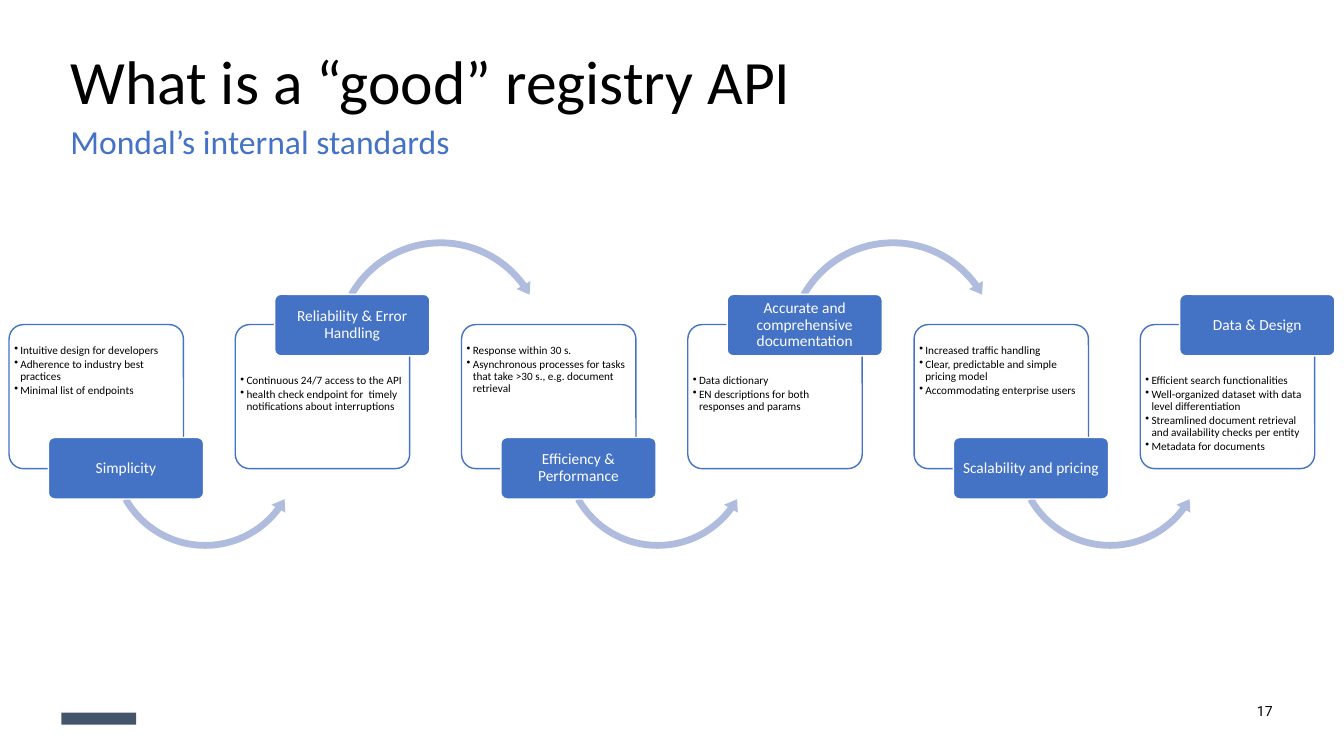
import pptx
import pptx.util
import pptx.dml.color
import pptx.enum.shapes
import pptx.enum.text
import pptx.oxml
import pptx.oxml.ns
import lxml.etree

theme = {
    "blue": "4472C4", "pale": "B0BCDE", "slate": "44546A",
    "white": "FFFFFF", "black": "000000",
    "title": 44, "sub": 24, "label": 11, "page": 10, "list": 8,
    "font": "Calibri", "digit": "Roboto",
}
steps = [
    ("Simplicity", ["Intuitive design for developers",
                    "Adherence to industry best practices",
                    "Minimal list of endpoints"]),
    ("Reliability & Error Handling", [
        "Continuous 24/7 access to the API",
        "health check endpoint for  timely notifications about interruptions"]),
    ("Efficiency & Performance", [
        "Response within 30 s.",
        "Asynchronous processes for tasks that take >30 s., e.g. document retrieval"]),
    ("Accurate and comprehensive documentation", [
        "Data dictionary",
        "EN descriptions for both responses and params"]),
    ("Scalability and pricing", [
        "Increased traffic handling",
        "Clear, predictable and simple pricing model",
        "Accommodating enterprise users"]),
    ("Data & Design", [
        "Efficient search functionalities",
        "Well-organized dataset with data level differentiation",
        "Streamlined document retrieval and availability checks per entity",
        "Metadata for documents"]),
]

cell = pptx.util.Inches(0.1)
kinds = pptx.enum.shapes.MSO_SHAPE
align = pptx.enum.text.PP_ALIGN
anchor = pptx.enum.text.MSO_ANCHOR
qn = pptx.oxml.ns.qn
rgb = pptx.dml.color.RGBColor.from_string

deck = pptx.Presentation()
deck.slide_width = pptx.util.Inches(13.33)
deck.slide_height = pptx.util.Inches(7.5)
slide = deck.slides.add_slide(deck.slide_layouts[6])


def draw(kind, spot, fill, line=None, bends=()):
    shape = slide.shapes.add_shape(kind, *[round(n * cell) for n in spot])
    shape.shadow.inherit = False
    shape.fill.solid()
    shape.fill.fore_color.rgb = rgb(theme[fill])
    if line:
        shape.line.color.rgb = rgb(theme[line])
        shape.line.width = pptx.util.Pt(1)
    else:
        shape.line.fill.background()
    for i, bend in enumerate(bends):
        shape.adjustments[i] = bend
    return shape


def write(shape, lines, size, color, side, mid, space, pad=None, dot=False, face="font"):
    frame = shape.text_frame
    frame.word_wrap = True
    frame.vertical_anchor = mid
    if pad:
        (frame.margin_left, frame.margin_top,
         frame.margin_right, frame.margin_bottom) = [round(n * cell) for n in pad]
    for i, line in enumerate(lines):
        para = frame.add_paragraph() if i else frame.paragraphs[0]
        para.text = line
        if dot:
            props = para._p.get_or_add_pPr()
            props.set("marL", str(round(0.6 * cell)))
            props.set("indent", str(round(-0.6 * cell)))
            lxml.etree.SubElement(props, qn("a:buChar")).set("char", "•")
            para.space_after = pptx.util.Pt(1.2)
        para.alignment = side
        para.line_spacing = space
        para.font.size = pptx.util.Pt(theme[size])
        para.font.name = theme[face]
        para.font.color.rgb = rgb(theme[color])


draw(kinds.RECTANGLE, (6.1, 70.7, 7.4, 1.2), "slate")

heads = [
    ("What is a “good” registry API", (6, 6, 121.3, 4.7),
     "title", "black", align.LEFT, anchor.MIDDLE, 0.9, "font"),
    ("Mondal’s internal standards", (6, 12.3, 121.3, 3.2),
     "sub", "blue", align.LEFT, anchor.TOP, 0.8, "font"),
    ("17", (114, 69, 13.2, 3),
     "page", "black", align.RIGHT, anchor.MIDDLE, 1.0, "digit"),
]
for text, spot, size, color, side, mid, space, face in heads:
    box = slide.shapes.add_textbox(*[round(n * cell) for n in spot])
    write(box, [text], size, color, side, mid, space, face=face)

pitch = 22.44
for i, (name, notes) in enumerate(steps):
    left = 0.9 + i * pitch
    high = i % 2 == 1
    card = draw(kinds.ROUNDED_RECTANGLE, (left, 32.2, 17.3, 14.3),
                "white", "blue", [0.1])
    tint = card.fill._xPr.find(qn("a:solidFill"))[0]
    lxml.etree.SubElement(tint, qn("a:alpha")).set("val", "90000")
    write(card, notes, "list", "black", align.LEFT, anchor.TOP, 0.9,
          (0.1, 4.6 if high else 1.6, 0.2, 0.2), dot=True)
    if i < len(steps) - 1:
        if high:
            draw(kinds.CIRCULAR_ARROW, (left + 9.4, 23.3, 21.9, 21.9), "pale",
                 bends=[0.031, 3.811, 194.434, 125.755, 0.036])
        else:
            draw(kinds.LEFT_CIRCULAR_ARROW, (left + 9.6, 35.2, 19.7, 19.7), "pale",
                 bends=[0.034, 4.274, 22.03, 90.245, 0.04])
    label = draw(kinds.ROUNDED_RECTANGLE,
                 (left + 3.9, 29.2 if high else 43.4, 15.4, 6.1),
                 "blue", "white", [0.1])
    write(label, [name], "label", "white", align.CENTER, anchor.MIDDLE, 0.9,
          (0.2, 0.2, 0.2, 0.2))

deck.save("out.pptx")
